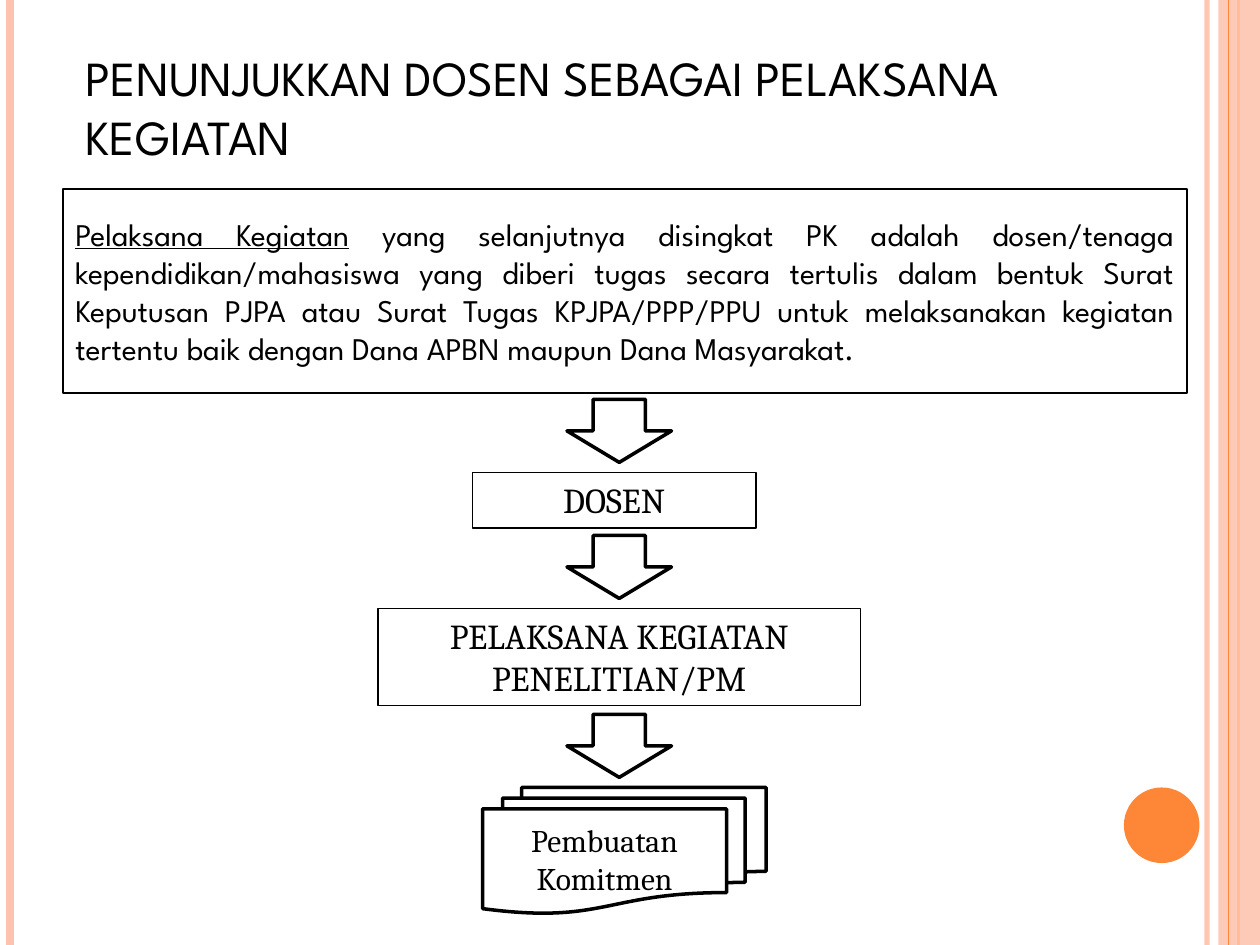
from dataclasses import dataclass
from typing import Optional

from lxml import etree
from pptx import Presentation
from pptx.dml.color import RGBColor
from pptx.enum import shapes, text
from pptx.oxml.ns import qn
from pptx.util import Inches, Pt


@dataclass(frozen=True)
class Theme:
    ink: RGBColor = RGBColor(0x00, 0x00, 0x00)
    accent: RGBColor = RGBColor(0xFE, 0x86, 0x37)
    tint: RGBColor = RGBColor(0xFE, 0xC3, 0xAE)
    sans: str = "League Spartan"
    serif: str = "Cambria"
    title: int = 28
    step: int = 20
    body: int = 18
    thin: float = 0.75
    thick: float = 2


@dataclass(frozen=True)
class Box:
    left: float
    top: float
    width: float
    height: float

    def emu(self) -> tuple:
        return tuple(Inches(n) for n in (self.left, self.top, self.width, self.height))


@dataclass(frozen=True)
class Stripe:
    x: float
    color: RGBColor
    weight: float
    opacity: Optional[int] = None


@dataclass(frozen=True)
class Run:
    words: str
    font: str
    size: int
    underline: bool = False


@dataclass(frozen=True)
class Node:
    box: Box
    runs: tuple
    kind: int = shapes.MSO_SHAPE.RECTANGLE
    weight: float = Theme.thin
    align: int = text.PP_ALIGN.CENTER
    anchor: int = text.MSO_ANCHOR.TOP


THEME = Theme()
WIDTH, HEIGHT = 10, 7.5
STRIPES = (
    Stripe(9.58, THEME.tint, 3, 93),
    Stripe(0.08, THEME.tint, 4.5),
    Stripe(9.83, THEME.accent, 1.5),
    Stripe(9.75, THEME.accent, 0.75),
)
BAND = Box(9.67, 0, 0.33, HEIGHT)
DISC = Box(8.92, 6.25, 0.6, 0.6)
TITLE = Box(0.58, 0.33, 8.83, 1.04)
ARROW_TOPS = (3.17, 4.25, 5.67)
NODES = (
    Node(
        Box(0.5, 1.5, 8.92, 1.62),
        (
            Run("Pelaksana Kegiatan", THEME.sans, THEME.body, True),
            Run(
                " yang selanjutnya disingkat PK adalah dosen/tenaga "
                "kependidikan/mahasiswa yang diberi tugas secara tertulis dalam "
                "bentuk Surat Keputusan PJPA atau Surat Tugas KPJPA/PPP/PPU untuk "
                "melaksanakan kegiatan tertentu baik dengan Dana APBN maupun "
                "Dana Masyarakat.",
                THEME.sans,
                THEME.body,
            ),
        ),
        align=text.PP_ALIGN.JUSTIFY,
        anchor=text.MSO_ANCHOR.MIDDLE,
    ),
    Node(Box(3.75, 3.75, 2.25, 0.44), (Run("DOSEN", THEME.serif, THEME.step),)),
    Node(
        Box(3, 4.83, 3.83, 0.77),
        (Run("PELAKSANA KEGIATAN PENELITIAN/PM", THEME.serif, THEME.step),),
    ),
    Node(
        Box(3.83, 6.25, 2.25, 1),
        (Run("Pembuatan Komitmen", THEME.serif, THEME.body),),
        kind=shapes.MSO_SHAPE.FLOWCHART_MULTIDOCUMENT,
        weight=THEME.thick,
        anchor=text.MSO_ANCHOR.MIDDLE,
    ),
)


def set_opacity(sp, percent: int) -> None:
    color = sp._element.spPr.find(".//" + qn("a:srgbClr"))
    etree.SubElement(color, qn("a:alpha")).set("val", str(percent * 1000))


def add_stripe(slide, stripe: Stripe) -> None:
    x = Inches(stripe.x)
    line = slide.shapes.add_connector(
        shapes.MSO_CONNECTOR.STRAIGHT, x, 0, x, Inches(HEIGHT)
    )
    line.line.color.rgb = stripe.color
    line.line.width = Pt(stripe.weight)
    etree.SubElement(line._element.spPr, qn("a:effectLst"))
    if stripe.opacity is not None:
        set_opacity(line, stripe.opacity)


def add_solid(slide, kind: int, box: Box, color: RGBColor):
    sp = slide.shapes.add_shape(kind, *box.emu())
    sp.shadow.inherit = False
    sp.fill.solid()
    sp.fill.fore_color.rgb = color
    sp.line.fill.background()
    return sp


def add_outline(slide, kind: int, box: Box, weight: float):
    sp = slide.shapes.add_shape(kind, *box.emu())
    sp.shadow.inherit = False
    sp.fill.background()
    sp.line.color.rgb = THEME.ink
    sp.line.width = Pt(weight)
    return sp


def write(sp, runs: tuple, align: int, anchor: int) -> None:
    tf = sp.text_frame
    tf.word_wrap = True
    tf.auto_size = text.MSO_AUTO_SIZE.NONE
    tf.vertical_anchor = anchor
    p = tf.paragraphs[0]
    p.alignment = align
    for run in runs:
        r = p.add_run()
        r.text = run.words
        r.font.name = run.font
        r.font.size = Pt(run.size)
        r.font.underline = run.underline
        r.font.color.rgb = THEME.ink


def add_node(slide, node: Node) -> None:
    sp = add_outline(slide, node.kind, node.box, node.weight)
    write(sp, node.runs, node.align, node.anchor)


def add_title(slide, words: str) -> None:
    sp = slide.shapes.title
    sp.left, sp.top, sp.width, sp.height = TITLE.emu()
    run = Run(words, THEME.sans, THEME.title)
    write(sp, (run,), text.PP_ALIGN.LEFT, text.MSO_ANCHOR.TOP)


def main() -> None:
    prs = Presentation()
    prs.slide_width, prs.slide_height = Inches(WIDTH), Inches(HEIGHT)
    slide = prs.slides.add_slide(prs.slide_layouts.get_by_name("Title Only"))
    for stripe in STRIPES[:3]:
        add_stripe(slide, stripe)
    band = add_solid(slide, shapes.MSO_SHAPE.RECTANGLE, BAND, THEME.tint)
    set_opacity(band, 87)
    add_stripe(slide, STRIPES[3])
    add_solid(slide, shapes.MSO_SHAPE.OVAL, DISC, THEME.accent)
    add_title(slide, "PENUNJUKKAN DOSEN SEBAGAI PELAKSANA KEGIATAN")
    for node in NODES:
        add_node(slide, node)
    for top in ARROW_TOPS:
        arrow = Box(4.5, top, 0.83, 0.5)
        add_outline(slide, shapes.MSO_SHAPE.DOWN_ARROW, arrow, THEME.thick)
    prs.save("out.pptx")


if __name__ == "__main__":
    main()
